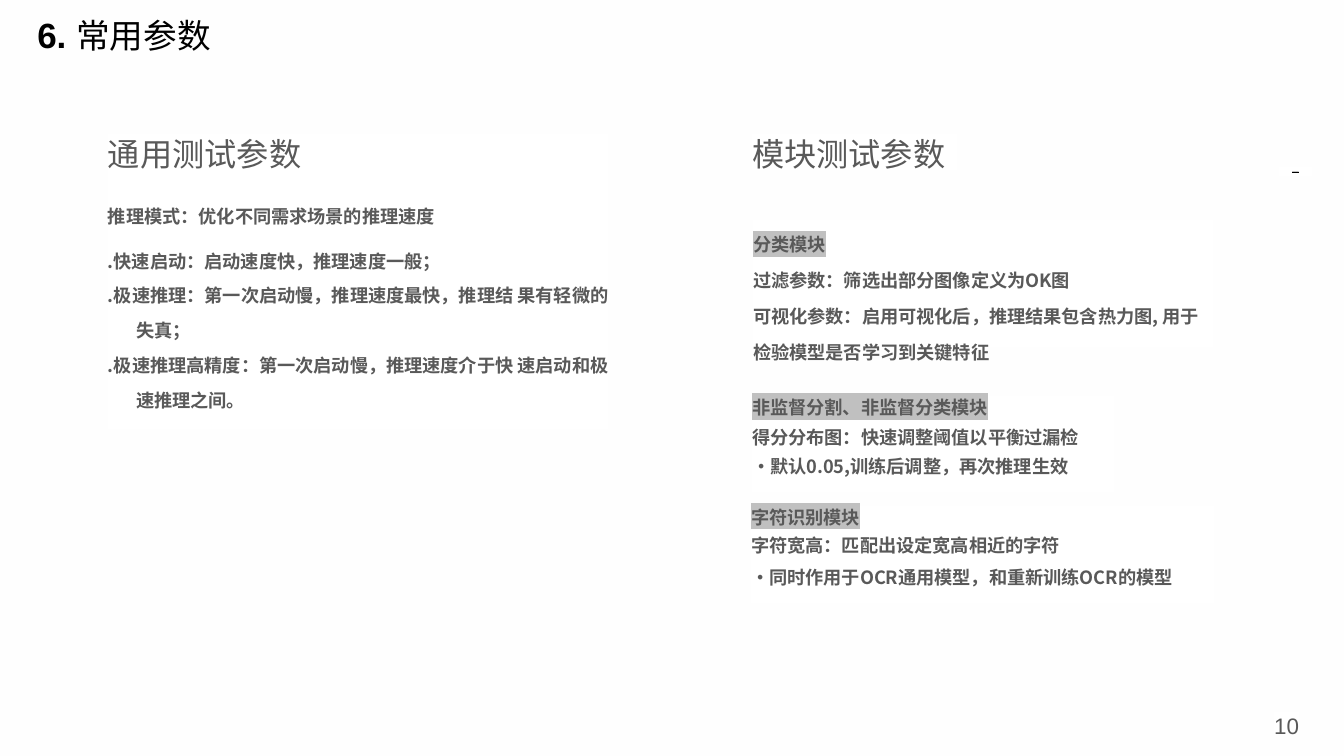
import pptx
import pptx.util
import pptx.dml.color
import pptx.enum.shapes
import pptx.enum.text
import pptx.oxml.ns
import lxml.etree

Pt = pptx.util.Pt
Inches = pptx.util.Inches
RGB = pptx.dml.color.RGBColor.from_string
ALIGN = pptx.enum.text.PP_ALIGN
qn = pptx.oxml.ns.qn

THEME = {
    "page": "FEFEFE", "panel": "FFFFFF", "highlight": "C0C0C0",
    "latin": "Arial", "chinese": "Noto Sans CJK SC",
    # text styles: size, font, colour, bold
    "number": (25, "latin", "000000", True),
    "title": (24, "chinese", "000000", False),
    "heading": (23, "chinese", "595959", False),
    "body": (13, "chinese", "595959", True),
    "mark": (4, "latin", "000000", False),
    "page number": (16, "latin", "595959", False),
}

deck = pptx.Presentation()
deck.slide_width, deck.slide_height = Inches(13.33), Inches(7.5)
page = deck.slides.add_slide(deck.slide_layouts[6])
page.background.fill.solid()
page.background.fill.fore_color.rgb = RGB(THEME["page"])


def add_panel(left, top, width, height, wrap=True, filled=True):
    """Add a text area placed in percent of the slide; return its text frame."""
    place = [round(share / 100 * side) for share, side in zip(
        (left, top, width, height), (deck.slide_width, deck.slide_height) * 2)]
    if filled:
        box = page.shapes.add_shape(pptx.enum.shapes.MSO_SHAPE.RECTANGLE, *place)
        box.shadow.inherit = False
        box.fill.solid()
        box.fill.fore_color.rgb = RGB(THEME["panel"])
        box.line.fill.background()
    else:
        box = page.shapes.add_textbox(*place)
    frame = box.text_frame
    frame.margin_left = frame.margin_top = frame.margin_right = frame.margin_bottom = 0
    frame.vertical_anchor = pptx.enum.text.MSO_ANCHOR.TOP
    frame.word_wrap = wrap
    return frame


def add_para(frame, *spans, align=ALIGN.LEFT, after=0, leading=None,
             hanging=False, highlight=False, underline=None):
    """Fill the empty first paragraph or append one; spans are (text, style)."""
    para = frame.paragraphs[0]
    if para.runs:
        para = frame.add_paragraph()
    para.alignment = align
    para.space_before, para.space_after = Pt(0), Pt(after)
    if leading:
        para.line_spacing = Pt(leading)
    if hanging:
        properties = para._p.get_or_add_pPr()
        properties.set("marL", str(Inches(0.28)))
        properties.set("indent", str(Inches(-0.32)))
    for text, style in spans:
        size, family, colour, bold = THEME[style]
        span = para.add_run()
        span.text = text
        font = span.font
        font.size, font.bold, font.underline = Pt(size), bold, underline
        font.color.rgb = RGB(colour)
        run_properties = span._r.get_or_add_rPr()
        if highlight:
            marker = lxml.etree.SubElement(run_properties, qn("a:highlight"))
            lxml.etree.SubElement(marker, qn("a:srgbClr"), val=THEME["highlight"])
        font.name = THEME[family]
        lxml.etree.SubElement(run_properties, qn("a:ea"), typeface=THEME[family])


# Slide title
title = add_panel(2.78, 1.73, 18.68, 4.93, wrap=False, filled=False)
add_para(title, ("6. ", "number"), ("常用参数", "title"))

# Left column: general parameters
general = add_panel(8.03, 17.73, 37.21, 39.07)
add_para(general, ("通用测试参数", "heading"), after=14)
for text, after, hanging in (
    ("推理模式：优化不同需求场景的推理速度", 7, False),
    (".快速启动：启动速度快，推理速度一般；", 0, False),
    (".极速推理：第一次启动慢，推理速度最快，推理结 果有轻微的失真；", 0, True),
    (".极速推理高精度：第一次启动慢，推理速度介于快 速启动和极速推理之间。", 0, True),
):
    add_para(general, (text, "body"), align=ALIGN.JUSTIFY, after=after,
             leading=24.9, hanging=hanging)

# Right column: module parameters
heading = add_panel(55.96, 17.73, 15.23, 4.8, wrap=False)
add_para(heading, ("模块测试参数", "heading"))

mark = add_panel(95.12, 22, 2.55, 1.33, wrap=False)
add_para(mark, ("__", "mark"), align=ALIGN.CENTER, underline=True)

# Each module: place, line spacing, then (text, space after); the first line is marked
modules = (
    ((56.04, 29.07, 34.21, 16.93), 25.6, (
        ("分类模块", 0),
        ("过滤参数：筛选出部分图像定义为OK图", 0),
        ("可视化参数：启用可视化后，推理结果包含热力图, 用于检验模型是否学习到关键特征", 0))),
    ((55.96, 52.4, 26.93, 12.67), None, (
        ("非监督分割、非监督分类模块", 5.6),
        ("得分分布图：快速调整阈值以平衡过漏检", 5.6),
        ("•默认0.05,训练后调整，再次推理生效", 0))),
    ((55.89, 66.93, 34.43, 12.93), None, (
        ("字符识别模块", 4.9),
        ("字符宽高：匹配出设定宽高相近的字符", 7),
        ("•同时作用于OCR通用模型，和重新训练OCR的模型", 7))),
)
for place, leading, lines in modules:
    module = add_panel(*place)
    for index, (text, after) in enumerate(lines):
        add_para(module, (text, "body"), after=after, leading=leading,
                 highlight=index == 0)

page_number = add_panel(94.75, 94.13, 1.95, 2.67, wrap=False)
add_para(page_number, ("10", "page number"), align=ALIGN.CENTER)

deck.save("out.pptx")
